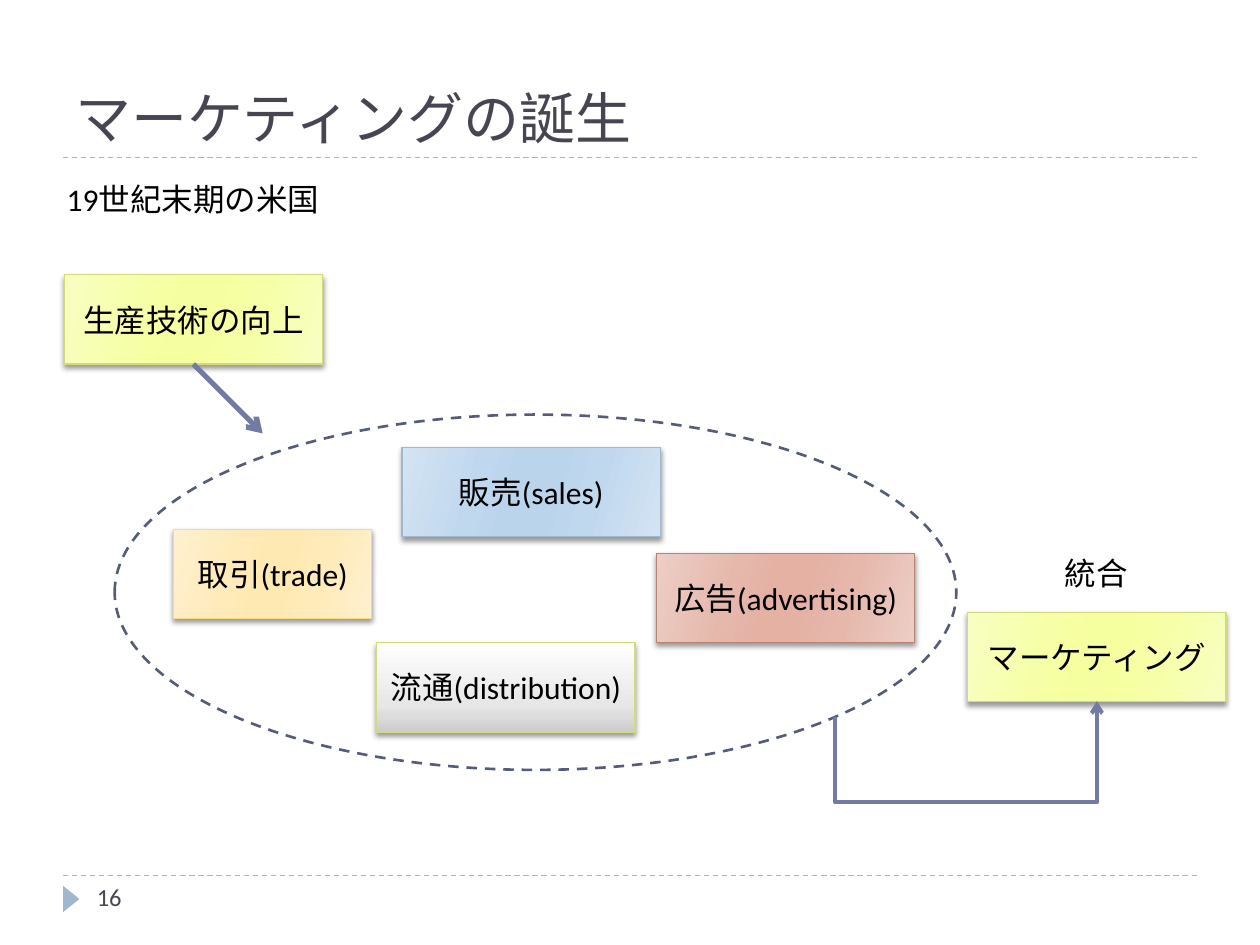
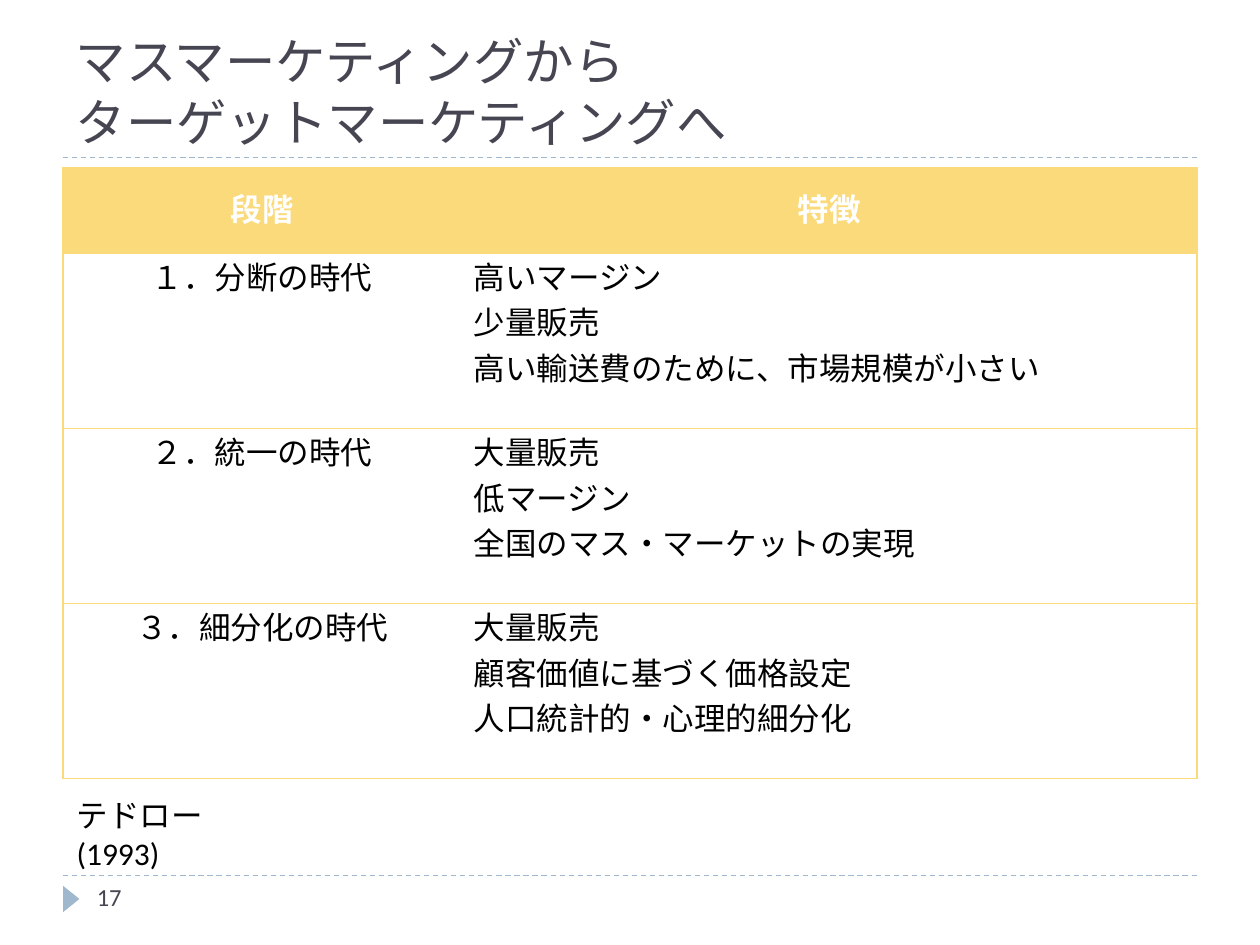
from lxml import etree
from pptx import Presentation
from pptx.dml.color import RGBColor
from pptx.enum.dml import MSO_LINE
from pptx.enum.shapes import MSO_CONNECTOR, MSO_SHAPE
from pptx.enum.text import MSO_ANCHOR, MSO_AUTO_SIZE, PP_ALIGN
from pptx.oxml.ns import qn
from pptx.util import Inches, Pt

STRAIGHT, ELBOW = MSO_CONNECTOR.STRAIGHT, MSO_CONNECTOR.ELBOW
RECTANGLE, OVAL, TRIANGLE = MSO_SHAPE.RECTANGLE, MSO_SHAPE.OVAL, MSO_SHAPE.ISOSCELES_TRIANGLE
TOP, MIDDLE, BOTTOM = MSO_ANCHOR.TOP, MSO_ANCHOR.MIDDLE, MSO_ANCHOR.BOTTOM
LEFT, CENTER = PP_ALIGN.LEFT, PP_ALIGN.CENTER
DASH = MSO_LINE.DASH
NO_AUTOFIT = MSO_AUTO_SIZE.NONE

COLORS = {
    "title": "464653", "text": "000000", "white": "FFFFFF", "rule": "9FB8CD",
    "arrow": "727CA3", "ellipse": "545C79", "gold": "FADA7A",
    "lime": "D2DA7A", "rust": "B88472",
}
BODY_FONT, TITLE_FONT = "Calibri", "Roboto Slab"
GLOW_POSITIONS = (0, 30, 45, 55, 73, 100)


def glow(edge, inner, core):
    return list(zip(GLOW_POSITIONS, (edge, inner, core, core, inner, edge)))


LIME_GLOW = glow("F8FEC2", "F6FFA7", "F6FF9F")
GOLD_GLOW = glow("FFF0CF", "FFEBBA", "FFE9B3")
RUST_GLOW = glow("ECCEC6", "E6B8AC", "E4B1A3")
BLUE_GLOW = glow("D3E3F2", "C0D8EE", "BAD4EC")
GRAY_FADE = [(0, "CCCCCC"), (30, "E7E7E7"), (100, "FFFFFF")]

BOX_WIDTH, BOX_HEIGHT = 2.05, 0.71
ACTIVITIES = [
    ("取引(trade)", 0.47, 0.91, 1.57, GOLD_GLOW, "gold", 16),
    ("広告(advertising)", 4.3, 1.1, BOX_WIDTH, RUST_GLOW, "rust", 16),
    ("販売(sales)", 2.28, 0.26, BOX_WIDTH, BLUE_GLOW, "rule", 16),
    ("流通(distribution)", 2.08, 1.81, BOX_WIDTH, GRAY_FADE, "lime", 270),
]
STAGES = [
    ("段階", "特徴"),
    ("１．分断の時代", "高いマージン\n少量販売\n高い輸送費のために、市場規模が小さい"),
    ("２．統一の時代", "大量販売\n低マージン\n全国のマス・マーケットの実現"),
    ("３．細分化の時代", "大量販売\n顧客価値に基づく価格設定\n人口統計的・心理的細分化"),
]


def rgb(name):
    return RGBColor.from_string(COLORS[name])


def inches(*lengths):
    return [Inches(length) for length in lengths]


def add_xml(parent, tag, **attributes):
    return etree.SubElement(parent, qn(tag), attributes)


def write_text(frame, text, size=18, color="text", bold=False, font=BODY_FONT,
               align=LEFT, space_before=0):
    frame.text = text
    for paragraph in frame.paragraphs:
        paragraph.alignment = align
        paragraph.space_before = Pt(space_before)
        for run in paragraph.runs:
            run.font.size = Pt(size)
            run.font.bold = bold
            run.font.name = font
            run.font.color.rgb = rgb(color)
            add_xml(run.font._element, "a:ea", typeface=BODY_FONT)


def add_label(slide, text, left, top, width, **text_format):
    frame = slide.shapes.add_textbox(*inches(left, top, width, 0.4)).text_frame
    frame.word_wrap = True
    write_text(frame, text, **text_format)


def add_line(slide, start, end, color, width, kind=STRAIGHT, dash=None, arrow=False):
    connector = slide.shapes.add_connector(kind, *inches(*start, *end))
    connector.line.color.rgb = rgb(color)
    connector.line.width = Pt(width)
    if dash:
        connector.line.dash_style = dash
    if arrow:
        add_xml(connector.line._get_or_add_ln(), "a:tailEnd", type="arrow")
    add_xml(connector.element.spPr, "a:effectLst")
    return connector


def add_gradient_box(slide, text, left, top, width, stops, line, angle):
    shape = slide.shapes.add_shape(RECTANGLE, *inches(left, top, width, BOX_HEIGHT))
    shape.fill.gradient()
    shape.fill.gradient_angle = (360 - angle) % 360
    properties = shape.element.spPr
    stop_list = properties.find(".//" + qn("a:gsLst"))
    for stop in list(stop_list):
        stop_list.remove(stop)
    for position, color in stops:
        stop = add_xml(stop_list, "a:gs", pos=str(position * 1000))
        add_xml(stop, "a:srgbClr", val=color)
    shape.line.color.rgb = rgb(line)
    shape.line.width = Pt(0.75)
    effects = add_xml(properties, "a:effectLst")
    shadow = add_xml(effects, "a:outerShdw", blurRad=str(Pt(3)), dist=str(Pt(2)),
                     dir="5400000", rotWithShape="0")
    add_xml(add_xml(shadow, "a:srgbClr", val=COLORS["text"]), "a:alpha", val="40000")
    frame = shape.text_frame
    frame.word_wrap = True
    frame.vertical_anchor = MIDDLE
    write_text(frame, text, align=CENTER)


def add_base_slide(presentation, title, number, title_size):
    slide = presentation.slides.add_slide(presentation.slide_layouts[5])
    for top in (6.95, 1.25):
        add_line(slide, (0.5, top), (9.5, top), "rule", 0.75, dash=DASH)
    marker = slide.shapes.add_shape(TRIANGLE, *inches(0.46, 7.07, 0.21, 0.13))
    marker.rotation = 90
    marker.shadow.inherit = False
    marker.fill.solid()
    marker.fill.fore_color.rgb = rgb("rule")
    marker.line.fill.background()
    placeholder = slide.shapes.title
    placeholder.left, placeholder.top, placeholder.width, placeholder.height = inches(
        0.5, 0.17, 9, 1.08)
    frame = placeholder.text_frame
    frame.auto_size = NO_AUTOFIT
    frame.vertical_anchor = BOTTOM
    write_text(frame, title, size=title_size, color="title", font=TITLE_FONT)
    add_label(slide, str(number), 0.67, 6.95, 2.17, size=14, color="title")
    return slide


def add_origin(slide, left, top):
    add_label(slide, "19世紀末期の米国", left - 0.08, top, 2.22)
    add_gradient_box(slide, "生産技術の向上", left, top + 0.8, BOX_WIDTH,
                     LIME_GLOW, "lime", 16)
    arrow_left, arrow_top = left + BOX_WIDTH / 2, top + 0.8 + BOX_HEIGHT
    add_line(slide, (arrow_left, arrow_top), (arrow_left + 0.55, arrow_top + 0.55),
             "arrow", 3, arrow=True)


def add_activities(slide, left, top):
    for text, x, y, width, stops, line, angle in ACTIVITIES:
        add_gradient_box(slide, text, left + x, top + y, width, stops, line, angle)
    ellipse = slide.shapes.add_shape(OVAL, *inches(left, top, 6.68, 2.82))
    ellipse.shadow.inherit = False
    ellipse.fill.background()
    ellipse.line.color.rgb = rgb("ellipse")
    ellipse.line.width = Pt(1.5)
    ellipse.line.dash_style = DASH


def add_integration(slide, left, top):
    add_label(slide, "統合", left + 0.67, top, 0.71)
    add_gradient_box(slide, "マーケティング", left, top + 0.51, BOX_WIDTH,
                     LIME_GLOW, "lime", 16)
    elbow = add_line(slide, (left + 0.05, top + 2.32), (left - 0.08, top + 0.24),
                     "arrow", 2.25, kind=ELBOW, arrow=True)
    properties = elbow.element.spPr
    properties.find(qn("a:xfrm")).set("rot", "5400000")
    adjustments = properties.find(qn("a:prstGeom")).get_or_add_avLst()
    add_xml(adjustments, "a:gd", name="adj1", fmla="val -517700")


def add_borders(cell, sides):
    properties = cell._tc.get_or_add_tcPr()
    for side in sides:
        border = add_xml(properties, "a:ln" + side, w=str(Pt(0.75)))
        add_xml(add_xml(border, "a:solidFill"), "a:srgbClr", val=COLORS["gold"])


def add_stage_table(slide, left, top):
    frame = slide.shapes.add_table(len(STAGES), 2, *inches(left, top, 9, 4.85))
    table = frame.table
    table.horz_banding = False
    style = table._tbl.tblPr.find(qn("a:tableStyleId"))
    style.text = "{2D5ABB26-0587-4C30-8999-92F81FD0307C}"
    table.columns[0].width, table.columns[1].width = inches(3.16, 5.84)
    for row, texts in enumerate(STAGES):
        header = row == 0
        table.rows[row].height = Inches(0.68 if header else 1.39)
        for column, text in enumerate(texts):
            cell = table.cell(row, column)
            add_borders(cell, ("L" if column == 0 else "R", "T", "B"))
            if header:
                cell.fill.solid()
                cell.fill.fore_color.rgb = rgb("gold")
            else:
                cell.fill.background()
            cell.vertical_anchor = MIDDLE if header else TOP
            write_text(cell.text_frame, text, color="white" if header else "text",
                       bold=header, space_before=4,
                       align=CENTER if header or column == 0 else LEFT)


def build_birth_slide(presentation):
    slide = add_base_slide(presentation, "マーケティングの誕生", 16, 32)
    add_origin(slide, 0.51, 1.38)
    add_activities(slide, 0.91, 3.29)
    add_integration(slide, 7.68, 4.35)


def build_stages_slide(presentation):
    title = "マスマーケティングから\vターゲットマーケティングへ"
    slide = add_base_slide(presentation, title, 17, 28.8)
    add_stage_table(slide, 0.5, 1.33)
    add_label(slide, "テドロー(1993)", 0.51, 6.27, 1.73)


def main():
    presentation = Presentation()
    presentation.slide_width, presentation.slide_height = inches(10, 7.5)
    build_birth_slide(presentation)
    build_stages_slide(presentation)
    presentation.save("out.pptx")


if __name__ == "__main__":
    main()
